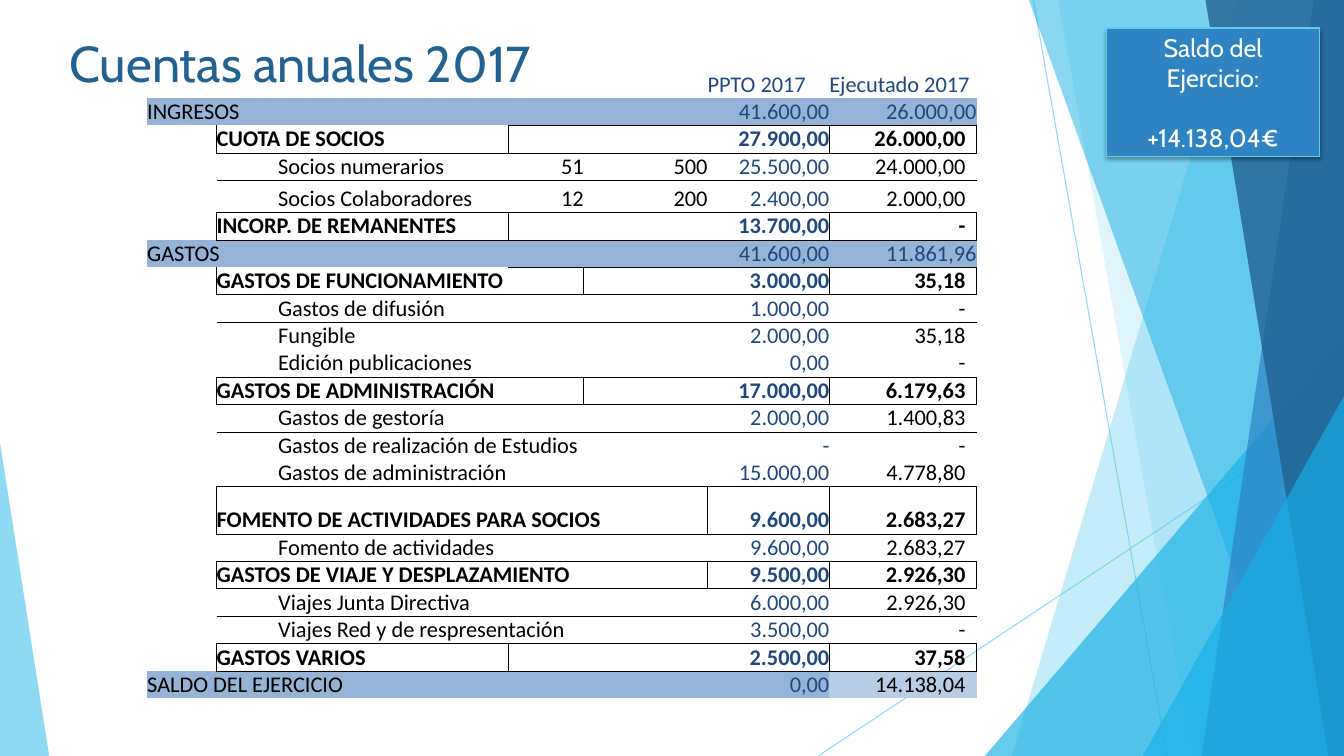
"""Build the slide with the 2017 annual accounts table and its year-end balance."""
import collections

import pptx
import pptx.dml.color
import pptx.enum.dml
import pptx.enum.shapes
import pptx.enum.text
import pptx.oxml
import pptx.oxml.ns
import pptx.util

Cm, Pt = pptx.util.Cm, pptx.util.Pt
ALIGN = pptx.enum.text.PP_ALIGN
ANCHOR = pptx.enum.text.MSO_ANCHOR
SHAPE = pptx.enum.shapes.MSO_SHAPE

TITLE = "Cuentas anuales 2017"
BALANCE = ["Saldo del Ejercicio:", "+14.138,04€"]
HEADINGS = {5: "PPTO 2017", 6: "Ejecutado 2017"}
TOTAL, GROUP, DETAIL = 0, 1, 2
ACCOUNTS = [
    (TOTAL, "INGRESOS", 2, "", "", "41.600,00", "26.000,00"),
    (GROUP, "CUOTA DE SOCIOS", 2, "", "", "27.900,00", "26.000,00"),
    (DETAIL, "Socios numerarios", 1, "51", "500", "25.500,00", "24.000,00"),
    (DETAIL, "Socios Colaboradores", 1, "12", "200", "2.400,00", "2.000,00"),
    (GROUP, "INCORP. DE REMANENTES", 2, "", "", "13.700,00", "-"),
    (TOTAL, "GASTOS", 2, "", "", "41.600,00", "11.861,96"),
    (GROUP, "GASTOS DE FUNCIONAMIENTO", 3, "", "", "3.000,00", "35,18"),
    (DETAIL, "Gastos de difusión", 1, "", "", "1.000,00", "-"),
    (DETAIL, "Fungible", 1, "", "", "2.000,00", "35,18"),
    (DETAIL, "Edición publicaciones", 1, "", "", "0,00", "-"),
    (GROUP, "GASTOS DE ADMINISTRACIÓN", 3, "", "", "17.000,00", "6.179,63"),
    (DETAIL, "Gastos de gestoría", 1, "", "", "2.000,00", "1.400,83"),
    (DETAIL, "Gastos de realización de Estudios", 3, "", "", "-", "-"),
    (DETAIL, "Gastos de administración", 2, "", "", "15.000,00", "4.778,80"),
    (GROUP, "FOMENTO DE ACTIVIDADES PARA SOCIOS", 4, "", "", "9.600,00", "2.683,27"),
    (DETAIL, "Fomento de actividades", 1, "", "", "9.600,00", "2.683,27"),
    (GROUP, "GASTOS DE VIAJE Y DESPLAZAMIENTO", 4, "", "", "9.500,00", "2.926,30"),
    (DETAIL, "Viajes Junta Directiva", 1, "", "", "6.000,00", "2.926,30"),
    (DETAIL, "Viajes Red y de respresentación", 2, "", "", "3.500,00", "-"),
    (GROUP, "GASTOS VARIOS", 2, "", "", "2.500,00", "37,58"),
    (TOTAL, "SALDO DEL EJERCICIO", 3, "", "", "0,00", "14.138,04"),
]
COLUMN_WIDTHS = [1.75, 1.55, 5.79, 1.91, 3.12, 3.07, 3.71]
ROW_HEIGHT, TALL_ROWS = 0.69, {4: 0.81, 15: 1.19}
BUDGET, EXECUTED = 5, 6
LAST_ROW = len(ACCOUNTS)

COLORS = {
    "title": "226292", "box": "2E83C3", "sky": "5FCBEF", "cyan": "17B0E4",
    "white": "FFFFFF", "black": "000000", "navy": "1F497D",
    "total": "95B3D7", "result": "B8CCE4",
}
WIDTH, HEIGHT = 33.87, 19.05
RAYS = [(26.04, 0, 29.41, HEIGHT), (WIDTH, 10.24, 20.62, HEIGHT)]
FACETS = [
    ("band", (31.19, 25.5), "sky", 36),
    ("band", (26.67, 30.05), "sky", 20),
    ("triangle", (24.82, 8.46, 9.05, 10.59, 1), "cyan", 66),
    ("band", (25.93, 32.79), "cyan", 50),
    ("band", (33.1, 30.28), "box", 70),
    ("band", (30.38, 33.48), "title", 80),
    ("triangle", (28.8, 9.98, 5.07, 9.07, 1), "cyan", 66),
    ("triangle", (0, 11.15, 1.24, 7.9, 0), "sky", 70),
]
NAMESPACE = pptx.oxml.ns.nsdecls("a")


def rgb(name):
    return pptx.dml.color.RGBColor.from_string(COLORS[name])


def assign(target, values):
    for name, value in values.items():
        setattr(target, name, value)


def write(paragraph, text, font, size, color, bold=False, align=ALIGN.LEFT):
    paragraph.alignment = align
    run = paragraph.add_run()
    run.text = text
    assign(run.font, {"name": font, "size": Pt(size), "bold": bold})
    run.font.color.rgb = rgb(color)


def set_alpha(element, percent):
    color = element.find(".//" + pptx.oxml.ns.qn("a:srgbClr"))
    color.append(pptx.oxml.parse_xml(f'<a:alpha {NAMESPACE} val="{percent * 1000}"/>'))


def draw_backdrop(shapes):
    for ends in RAYS:
        ray = shapes.add_connector(pptx.enum.shapes.MSO_CONNECTOR.STRAIGHT, *map(Cm, ends))
        ray.line.width = Pt(0.75)
        ray.line.color.rgb = rgb("sky")
        properties = ray._element.spPr
        set_alpha(properties, 70)
        properties.append(pptx.oxml.parse_xml(f"<a:effectLst {NAMESPACE}/>"))
    for kind, geometry, color, alpha in FACETS:
        if kind == "band":
            top, bottom = geometry
            outline = shapes.build_freeform(Cm(top), 0)
            corners = [(WIDTH, 0), (WIDTH, HEIGHT), (bottom, HEIGHT)]
            outline.add_line_segments([(Cm(x), Cm(y)) for x, y in corners], close=True)
            facet = outline.convert_to_shape()
        else:
            *box, apex = geometry
            facet = shapes.add_shape(SHAPE.ISOSCELES_TRIANGLE, *map(Cm, box))
            facet.adjustments[0] = apex
        facet.shadow.inherit = False
        facet.fill.solid()
        facet.fill.fore_color.rgb = rgb(color)
        facet.line.fill.background()
        set_alpha(facet._element.spPr, alpha)


def draw_balance(shapes):
    balance = shapes.add_shape(SHAPE.RECTANGLE, Cm(27.89), Cm(0.71), Cm(5.36), Cm(3.23))
    balance.fill.solid()
    balance.fill.fore_color.rgb = rgb("box")
    balance.line.color.rgb = rgb("sky")
    balance.line.width = Pt(1)
    balance.shadow.inherit = False
    effects = balance._element.spPr.find(pptx.oxml.ns.qn("a:effectLst"))
    effects.append(pptx.oxml.parse_xml(
        f'<a:outerShdw {NAMESPACE} blurRad="{Pt(3)}" dist="{Pt(2)}" dir="5400000" rotWithShape="0">'
        f'<a:srgbClr val="{COLORS["black"]}"><a:alpha val="35000"/></a:srgbClr></a:outerShdw>'))
    frame = balance.text_frame
    assign(frame, {"word_wrap": True, "vertical_anchor": ANCHOR.MIDDLE})
    label, amount = frame.paragraphs[0], frame.add_paragraph()
    amount.space_before = Pt(21.5)
    for paragraph, text in zip((label, amount), BALANCE):
        write(paragraph, text, "Cabin", 18, "white", align=ALIGN.CENTER)


def group_edges():
    edges = collections.defaultdict(set)
    levels = [None] + [account[0] for account in ACCOUNTS]
    for row, (level, _, span, *_) in enumerate(ACCOUNTS, 1):
        if level != GROUP:
            continue
        for column in range(GROUP, len(COLUMN_WIDTHS)):
            for side, opposite, step in (("T", "B", -1), ("B", "T", 1)):
                if column > span or levels[row + step] != TOTAL:
                    edges[row, column].add(side)
                    edges[row + step, column].add(opposite)
        for column in (0, BUDGET, EXECUTED):
            edges[row, column].add("R")
        for column in (GROUP, EXECUTED):
            edges[row, column].add("L")
    return edges


def cell_text(row, column):
    """Return the text of a cell and its run format."""
    if row == 0:
        return HEADINGS.get(column, ""), {"color": "navy"}
    level, label, _, *amounts = ACCOUNTS[row - 1]
    if column == level:
        return label, {"color": "black", "bold": level == GROUP}
    text = amounts[column - 3] if column >= 3 else ""
    plain_total = level == TOTAL and row < LAST_ROW
    navy = column == BUDGET or column == EXECUTED and plain_total
    return text, {"color": "navy" if navy else "black", "bold": level == GROUP, "align": ALIGN.RIGHT}


def draw_accounts(shapes):
    heights = [TALL_ROWS.get(row, ROW_HEIGHT) for row in range(LAST_ROW + 1)]
    table = shapes.add_table(len(heights), len(COLUMN_WIDTHS), Cm(3.71), Cm(1.78),
                             Cm(sum(COLUMN_WIDTHS)), Cm(sum(heights))).table
    assign(table, {"first_row": False, "horz_banding": False})
    style = table._tbl.tblPr.find(pptx.oxml.ns.qn("a:tableStyleId"))
    style.text = "{2D5ABB26-0587-4C30-8999-92F81FD0307C}"
    for column, width in zip(table.columns, COLUMN_WIDTHS):
        column.width = Cm(width)
    for row, height in zip(table.rows, heights):
        row.height = Cm(height)
    edges = group_edges()
    for row in range(len(heights)):
        level = ACCOUNTS[row - 1][0] if row else None
        for column in range(len(COLUMN_WIDTHS)):
            cell = table.cell(row, column)
            inset = column == EXECUTED and row and (level != TOTAL or row == LAST_ROW)
            assign(cell, {"margin_left": 0, "margin_right": Cm(0.28) if inset else 0, "margin_top": 0,
                          "margin_bottom": 0, "vertical_anchor": ANCHOR.BOTTOM})
            if level == TOTAL:
                cell.fill.solid()
                result = row == LAST_ROW and column == EXECUTED
                cell.fill.fore_color.rgb = rgb("result" if result else "total")
            else:
                cell.fill.background()
            text, style = cell_text(row, column)
            paragraph = cell.text_frame.paragraphs[0]
            if text:
                write(paragraph, text, "Calibri", 16, **style)
            else:
                paragraph._p.get_or_add_endParaRPr().set("sz", "1600")
            for place, side in enumerate(s for s in "LRTB" if s in edges[row, column]):
                cell._tc.get_or_add_tcPr().insert(place, pptx.oxml.parse_xml(
                    f'<a:ln{side} {NAMESPACE} w="{Pt(0.5)}"><a:solidFill>'
                    f'<a:srgbClr val="{COLORS["black"]}"/></a:solidFill></a:ln{side}>'))
    for row, (level, _, span, *_) in enumerate(ACCOUNTS, 1):
        if span > 1:
            table.cell(row, level).merge(table.cell(row, level + span - 1))


def main():
    deck = pptx.Presentation()
    assign(deck, {"slide_width": Cm(WIDTH), "slide_height": Cm(HEIGHT)})
    slide = deck.slides.add_slide(deck.slide_layouts[5])
    draw_backdrop(slide.shapes)
    title = slide.shapes.title
    assign(title, {"left": Cm(1.5), "top": Cm(0.69), "width": Cm(22.35), "height": Cm(2.24)})
    assign(title.text_frame, {"vertical_anchor": ANCHOR.TOP, "word_wrap": True,
                              "auto_size": pptx.enum.text.MSO_AUTO_SIZE.NONE})
    write(title.text_frame.paragraphs[0], TITLE, "Cabin", 36, "title")
    draw_balance(slide.shapes)
    draw_accounts(slide.shapes)
    deck.save("out.pptx")


if __name__ == "__main__":
    main()
